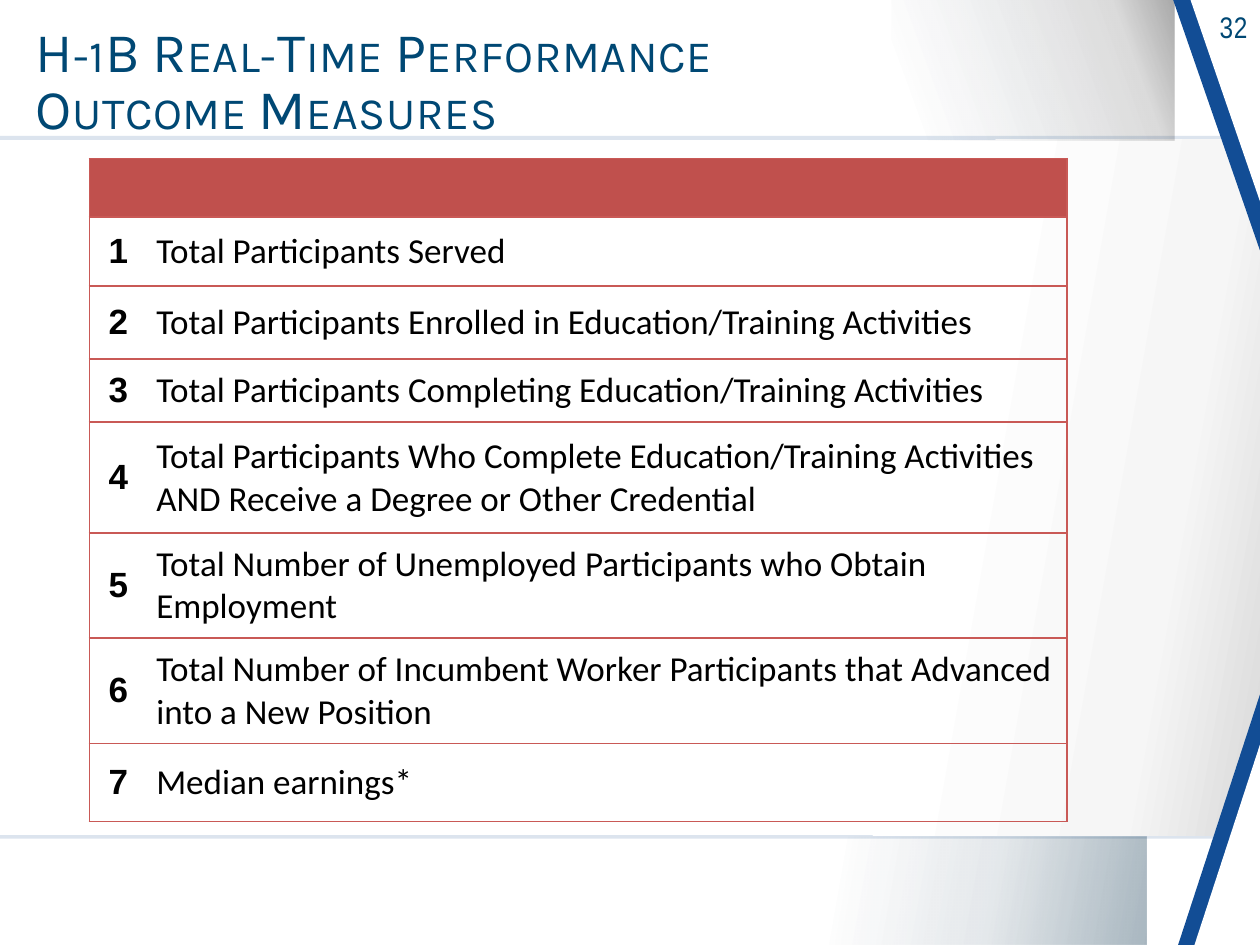
from lxml.etree import SubElement
from pptx import Presentation
from pptx.dml.color import RGBColor
from pptx.enum.shapes import MSO_SHAPE
from pptx.enum.text import MSO_ANCHOR, MSO_AUTO_SIZE, PP_ALIGN
from pptx.oxml.ns import qn
from pptx.util import Cm, Pt

NAVY, BLUE, WHITE, BLACK = "004874", "124D95", "FFFFFF", "000000"
HEADER_RED, BORDER_RED = "C0504D", "C95956"

NUMBER_FONT = {"name": "Arial", "size": Pt(20), "bold": True}
MEASURE_FONT = {"name": "Calibri", "size": Pt(20), "bold": False}
TITLE_FONT = {"name": "Karla", "size": Pt(32)}
PAGE_FONT = {"name": "Arial Narrow", "size": Pt(17)}

COLUMN_WIDTHS = (1.17, 18.54)
HEADER_HEIGHT = 1.17
MEASURES = [
    ("Total Participants Served", 1.4),
    ("Total Participants Enrolled in Education/Training Activities", 1.47),
    ("Total Participants Completing Education/Training Activities", 1.27),
    ("Total Participants Who Complete Education/Training Activities "
     "AND Receive a Degree or Other Credential", 2.24),
    ("Total Number of Unemployed Participants who Obtain Employment", 2.11),
    ("Total Number of Incumbent Worker Participants that Advanced "
     "into a New Position", 2.13),
    ("Median earnings*", 1.57),
]


def color(value):
    return RGBColor.from_string(value)


def add_color(parent, value, opacity=100):
    """Append a colour element with an opacity in percent."""
    element = SubElement(parent, qn("a:srgbClr"), val=value)
    if opacity < 100:
        SubElement(element, qn("a:alpha"), val=str(opacity * 1000))


def format_span(span, text, formats, value):
    span.text = text
    for name, setting in formats.items():
        setattr(span.font, name, setting)
    span.font.color.rgb = color(value)


def add_panel(page, place, value, kind=MSO_SHAPE.RECTANGLE, opacity=100):
    panel = page.shapes.add_shape(kind, *(Cm(length) for length in place))
    panel.shadow.inherit = False
    panel.fill.solid()
    panel.fill.fore_color.rgb = color(value)
    panel.line.fill.background()
    if opacity < 100:
        solid = panel._element.spPr.find(qn("a:solidFill"))
        solid.clear()
        add_color(solid, value, opacity)
    return panel


def add_gradient_panel(page, place, stops, angle):
    """Draw a rectangle with (position, colour, opacity) gradient stops."""
    panel = add_panel(page, place, WHITE)
    properties = panel._element.spPr
    solid = properties.find(qn("a:solidFill"))
    gradient = SubElement(properties, qn("a:gradFill"), rotWithShape="1")
    stop_list = SubElement(gradient, qn("a:gsLst"))
    for position, value, opacity in stops:
        stop = SubElement(stop_list, qn("a:gs"), pos=str(position * 1000))
        add_color(stop, value, opacity)
    SubElement(gradient, qn("a:lin"), ang=str(angle * 60000), scaled="0")
    properties.replace(solid, gradient)


def add_wedge(page, place, value, flipped=False):
    """Draw a triangle whose point lies on the right edge."""
    wedge = add_panel(page, place, value, MSO_SHAPE.ISOSCELES_TRIANGLE)
    wedge.adjustments[0] = 1
    if flipped:
        wedge._element.spPr.find(qn("a:xfrm")).set("flipV", "1")


def add_background(page):
    # Middle panel with its pale rules
    add_panel(page, (0, 2.74, 25.4, 14.17), "275A99", opacity=16)
    add_gradient_panel(page, (0, 2.82, 25.4, 14.02), [
        (0, WHITE, 100), (72, WHITE, 100), (90, "F6F6F6", 100),
        (100, "D9D9D9", 100)], 10)
    # Shaded strips below and above
    add_gradient_panel(page, (16.33, 16.87, 6.78, 2.18), [
        (10, "002C47", 0), (56, "002C47", 11), (100, "002C47", 34)], 10)
    add_gradient_panel(page, (17.98, 0, 5.69, 2.84), [
        (10, "002C47", 0), (81, BLACK, 14), (100, BLACK, 34)], 340)
    # Blue edges, each with a white wedge on top
    add_wedge(page, (23.65, 0, 1.75, 5.05), BLUE, flipped=True)
    add_wedge(page, (24, 0, 1.4, 4.06), WHITE, flipped=True)
    add_wedge(page, (23.75, 14, 1.65, 5.05), BLUE)
    add_wedge(page, (24.08, 15.01, 1.32, 4.04), WHITE)


def add_page_number(page, number):
    box = page.shapes.add_textbox(Cm(23.37), Cm(0.05), Cm(2.03), Cm(0.99))
    box.text_frame.word_wrap = True
    para = box.text_frame.paragraphs[0]
    para.alignment = PP_ALIGN.RIGHT
    span = para.add_run()
    format_span(span, number, PAGE_FONT, NAVY)
    span.font._element.set("spc", "40")


def fill_title(page, lines):
    title = page.shapes.title
    place = {"left": 0.46, "top": 0.61, "width": 20.83, "height": 2.16}
    for name, length in place.items():
        setattr(title, name, Cm(length))
    frame = title.text_frame
    frame.auto_size = MSO_AUTO_SIZE.NONE
    frame.vertical_anchor = MSO_ANCHOR.MIDDLE
    para = frame.paragraphs[0]
    para.alignment = PP_ALIGN.LEFT
    para.line_spacing = 0.85
    for index, line in enumerate(lines):
        if index:
            para.add_line_break()
        span = para.add_run()
        format_span(span, line, TITLE_FONT, NAVY)
        span.font._element.set("spc", "40")
        span.font._element.set("cap", "small")
    # Bring the title in front of the background
    page.shapes._spTree.append(title._element)


def set_borders(cell, open_side=None):
    """Draw red cell borders, leaving one side without a line."""
    properties = cell._tc.get_or_add_tcPr()
    for index, side in enumerate("LRTB"):
        line = properties.makeelement(qn(f"a:ln{side}"), {"w": str(Pt(1))})
        if side == open_side:
            SubElement(line, qn("a:noFill"))
        else:
            add_color(SubElement(line, qn("a:solidFill")), BORDER_RED)
        properties.insert(index, line)


def fill_cell(cell, text, formats, alignment, open_side):
    cell.fill.background()
    cell.vertical_anchor = MSO_ANCHOR.MIDDLE
    cell.margin_left = cell.margin_right = Cm(0.18)
    cell.margin_top = cell.margin_bottom = 0
    para = cell.text_frame.paragraphs[0]
    para.alignment = alignment
    format_span(para.add_run(), text, formats, BLACK)
    set_borders(cell, open_side)


def add_measures(page):
    heights = [HEADER_HEIGHT] + [height for _, height in MEASURES]
    table = page.shapes.add_table(
        len(heights), len(COLUMN_WIDTHS), Cm(1.8), Cm(3.2),
        Cm(sum(COLUMN_WIDTHS)), Cm(sum(heights))).table
    table.horz_banding = False
    for column, width in zip(table.columns, COLUMN_WIDTHS):
        column.width = Cm(width)
    for row, height in zip(table.rows, heights):
        row.height = Cm(height)
    # Empty header band
    header = table.cell(0, 0)
    header.merge(table.cell(0, 1))
    for cell in table.rows[0].cells:
        cell.fill.solid()
        cell.fill.fore_color.rgb = color(HEADER_RED)
        set_borders(cell)
    # Numbered measures
    for number, (measure, _) in enumerate(MEASURES, 1):
        fill_cell(table.cell(number, 0), str(number), NUMBER_FONT,
                  PP_ALIGN.CENTER, "R")
        fill_cell(table.cell(number, 1), measure, MEASURE_FONT,
                  PP_ALIGN.LEFT, "L")


def main():
    deck = Presentation()
    deck.slide_width, deck.slide_height = Cm(25.4), Cm(19.05)
    page = deck.slides.add_slide(deck.slide_layouts[5])
    add_background(page)
    add_page_number(page, "32")
    fill_title(page, ["H-1B Real-Time Performance ", "Outcome Measures"])
    add_measures(page)
    deck.save("out.pptx")


if __name__ == "__main__":
    main()
